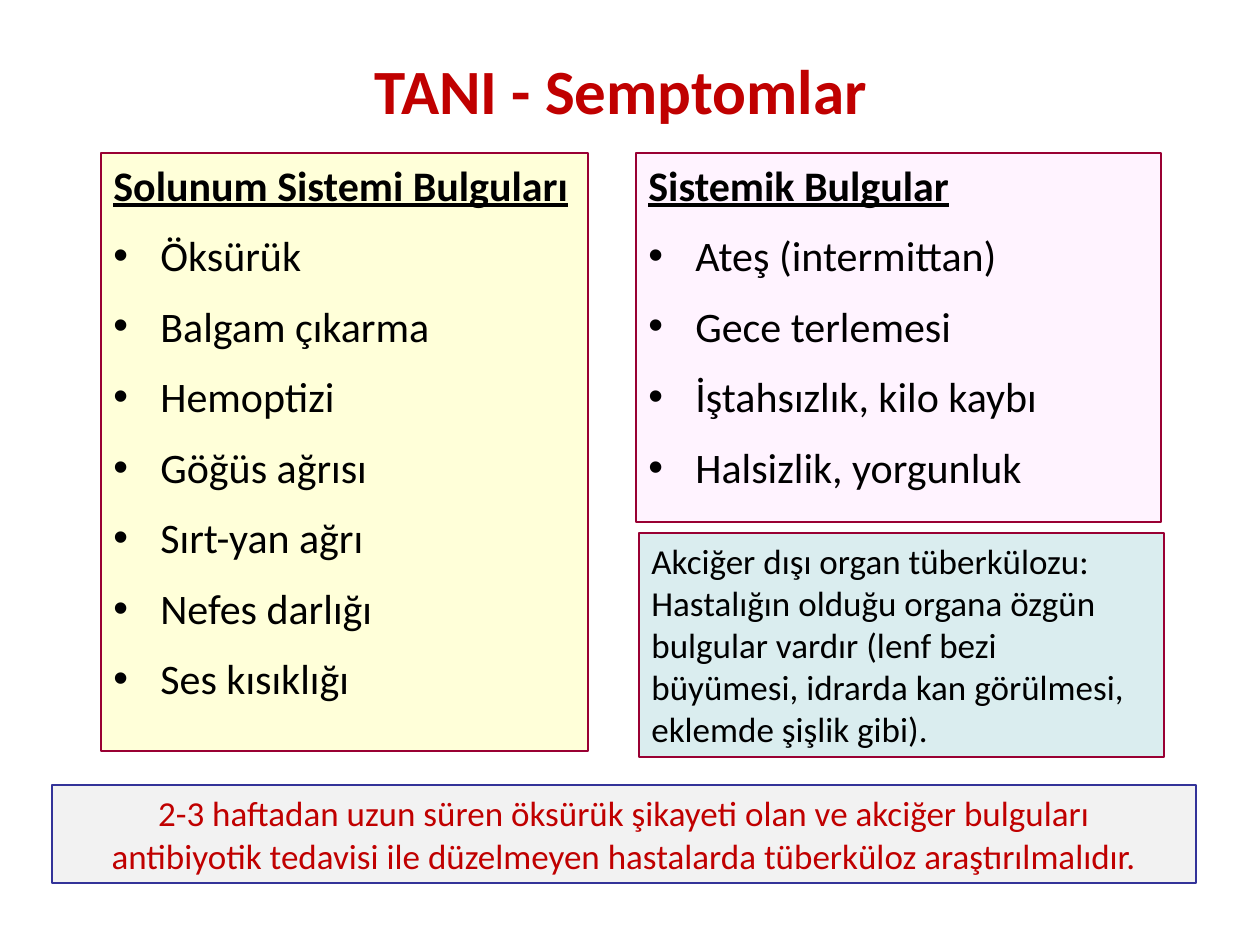
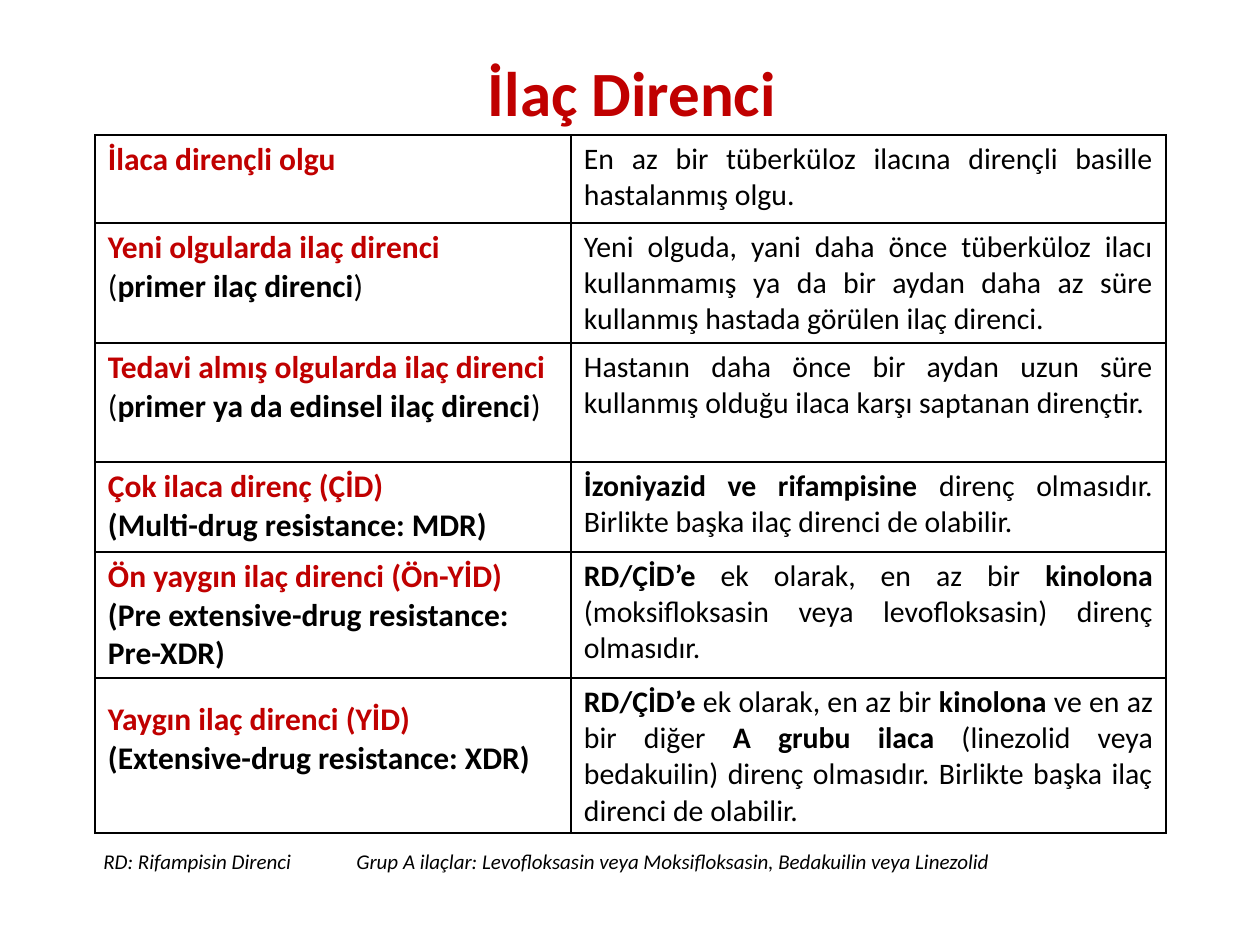
from lxml import etree
from pptx import Presentation
from pptx.dml.color import RGBColor
from pptx.enum import shapes, text
from pptx.oxml import ns
from pptx.util import Emu, Pt

RED = RGBColor(0xC0, 0x00, 0x00)
BLACK = RGBColor(0x00, 0x00, 0x00)
WINE = RGBColor(0x99, 0x00, 0x33)
INDIGO = RGBColor(0x33, 0x33, 0x99)
CREAM = RGBColor(0xFF, 0xFF, 0xD9)
PINK = RGBColor(0xFF, 0xF3, 0xFF)
AQUA = RGBColor(0xDA, 0xED, 0xEF)
GREY = RGBColor(0xF2, 0xF2, 0xF2)
FONT = "Calibri"
PX_PER_INCH = 126
BULLET_INDENT = 47

RESPIRATORY = ["Solunum Sistemi Bulguları", "Öksürük", "Balgam çıkarma", "Hemoptizi",
               "Göğüs ağrısı", "Sırt-yan ağrı", "Nefes darlığı", "Ses kısıklığı"]
SYSTEMIC = ["Sistemik Bulgular", "Ateş (intermittan)", "Gece terlemesi",
            "İştahsızlık, kilo kaybı", "Halsizlik, yorgunluk"]
EXTRAPULMONARY = ("Akciğer dışı organ tüberkülozu: Hastalığın olduğu organa özgün bulgular vardır "
                  "(lenf bezi büyümesi, idrarda kan görülmesi, eklemde şişlik gibi).")
WARNING = ("2-3 haftadan uzun süren öksürük şikayeti olan ve akciğer bulguları\n"
           "antibiyotik tedavisi ile düzelmeyen hastalarda tüberküloz araştırılmalıdır.")
FOOTNOTE = ("RD: Rifampisin Direnci\tGrup A ilaçlar: Levofloksasin veya Moksifloksasin, "
            "Bedakuilin veya Linezolid")

RESISTANCE = [
    (88, "İlaca dirençli olgu", "",
     "En az bir tüberküloz ilacına dirençli basille hastalanmış olgu."),
    (120, "Yeni olgularda ilaç direnci", "(*primer ilaç direnci*)",
     "Yeni olguda, yani daha önce tüberküloz ilacı kullanmamış ya da bir aydan daha az süre "
     "kullanmış hastada görülen ilaç direnci."),
    (119, "Tedavi almış olgularda ilaç direnci", "(*primer ya da edinsel ilaç direnci*)",
     "Hastanın daha önce bir aydan uzun süre kullanmış olduğu ilaca karşı saptanan dirençtir."),
    (90, "Çok ilaca direnç (ÇİD)", "*(Multi-drug resistance: MDR)*",
     "*İzoniyazid ve rifampisine* direnç olmasıdır. Birlikte başka ilaç direnci de olabilir."),
    (126, "Ön yaygın ilaç direnci (Ön-YİD)", "*(Pre extensive-drug resistance: Pre-XDR)*",
     "*RD/ÇİD’e* ek olarak, en az bir *kinolona* (moksifloksasin veya levofloksasin) "
     "direnç olmasıdır."),
    (155, "Yaygın ilaç direnci (YİD)", "*(Extensive-drug resistance: XDR)*",
     "*RD/ÇİD’e* ek olarak, en az bir *kinolona* ve en az bir diğer *A grubu ilaca* "
     "(linezolid veya bedakuilin) direnç olmasıdır. Birlikte başka ilaç direnci de olabilir."),
]


def px(length):
    """Turn pixels into EMU."""
    return Emu(round(length * 914400 / PX_PER_INCH))


def style(run, size, color=BLACK, bold=False):
    """Give a run its font, size, colour and weight."""
    run.font.name = FONT
    run.font.size = Pt(size)
    run.font.color.rgb = color
    run.font.bold = bold


def write(frame, wording, size, color=BLACK, bold=False, align=text.PP_ALIGN.LEFT):
    """Fill a wrapping text frame with evenly styled paragraphs."""
    frame.text = wording
    frame.word_wrap = True
    for paragraph in frame.paragraphs:
        paragraph.alignment = align
        for run in paragraph.runs:
            style(run, size, color, bold)


def add_title(slide, box, wording):
    """Add the red slide title."""
    frame = slide.shapes.add_textbox(*map(px, box)).text_frame
    write(frame, wording, 36, RED, True, text.PP_ALIGN.CENTER)


def add_panel(slide, box, fill, border=WINE):
    """Add a bordered rectangle and return its text frame."""
    panel = slide.shapes.add_shape(shapes.MSO_SHAPE.RECTANGLE, *map(px, box))
    panel.shadow.inherit = False
    panel.fill.solid()
    panel.fill.fore_color.rgb = fill
    panel.line.color.rgb = border
    panel.line.width = Pt(0.75)
    panel.text_frame.vertical_anchor = text.MSO_ANCHOR.TOP
    return panel.text_frame


def add_findings(slide, box, fill, findings):
    """Add a panel with an underlined heading above bulleted findings."""
    frame = add_panel(slide, box, fill)
    write(frame, "\n".join(findings), 24)
    heading, *items = frame.paragraphs
    heading.runs[0].font.bold = True
    heading.runs[0].font.underline = True
    for item in items:
        item.space_before = Pt(11.5)
        props = item._p.get_or_add_pPr()
        props.set("marL", str(px(BULLET_INDENT)))
        props.set("indent", str(-px(BULLET_INDENT)))
        etree.SubElement(props, ns.qn("a:buFont"), typeface="Arial")
        etree.SubElement(props, ns.qn("a:buChar"), char="•")


def write_marked(paragraph, wording, size):
    """Write text whose starred parts are bold."""
    for index, part in enumerate(wording.split("*")):
        if part:
            run = paragraph.add_run()
            run.text = part
            style(run, size, bold=index % 2 == 1)


def frame_cell(cell):
    """Give a cell thin black borders and no fill."""
    props = cell._tc.get_or_add_tcPr()
    for side in ("lnL", "lnR", "lnT", "lnB"):
        border = etree.SubElement(props, ns.qn(f"a:{side}"), w=str(Pt(1)))
        solid = etree.SubElement(border, ns.qn("a:solidFill"))
        etree.SubElement(solid, ns.qn("a:srgbClr"), val=str(BLACK))
    cell.fill.background()
    cell.margin_left = cell.margin_right = px(13)
    cell.margin_top = cell.margin_bottom = px(6)


def add_resistance_table(slide, box, term_width):
    """Add the table of resistance terms and their definitions."""
    table = slide.shapes.add_table(len(RESISTANCE), 2, *map(px, box)).table
    table.first_row = table.horz_banding = False
    table.columns[0].width = px(term_width)
    table.columns[1].width = px(box[2] - term_width)
    for row, (height, term, alias, definition) in zip(table.rows, RESISTANCE):
        row.height = px(height)
        term_cell, definition_cell = row.cells
        for cell in row.cells:
            frame_cell(cell)
        write(term_cell.text_frame, term, 18, RED, True)
        if alias:
            write_marked(term_cell.text_frame.add_paragraph(), alias, 18)
        meaning = definition_cell.text_frame.paragraphs[0]
        meaning.alignment = text.PP_ALIGN.JUSTIFY
        write_marked(meaning, definition, 17)
    term_cell.margin_top = px(23)


def add_footnote(slide, box, tab):
    """Add the italic abbreviations line with its second part at a tab stop."""
    frame = slide.shapes.add_textbox(*map(px, box)).text_frame
    write(frame, FOOTNOTE, 12)
    line = frame.paragraphs[0]
    for run in line.runs:
        run.font.italic = True
    stops = etree.SubElement(line._p.get_or_add_pPr(), ns.qn("a:tabLst"))
    etree.SubElement(stops, ns.qn("a:tab"), pos=str(px(tab)), algn="l")


def build_symptoms(slide):
    """Build the slide on symptoms."""
    add_title(slide, (243, 45, 756, 88), "TANI - Semptomlar")
    add_findings(slide, (101, 153, 487, 598), CREAM, RESPIRATORY)
    add_findings(slide, (636, 153, 525, 369), PINK, SYSTEMIC)
    warning = add_panel(slide, (52, 785, 1144, 98), GREY, INDIGO)
    warning.vertical_anchor = text.MSO_ANCHOR.MIDDLE
    write(warning, WARNING, 20, RED, align=text.PP_ALIGN.CENTER)
    write(add_panel(slide, (639, 533, 525, 224), AQUA), EXTRAPULMONARY, 20)


def build_resistance(slide):
    """Build the slide on drug resistance."""
    add_title(slide, (186, 47, 892, 88), "İlaç Direnci")
    add_resistance_table(slide, (95, 135, 1071, 698), 476)
    add_footnote(slide, (91, 842, 998, 38), 253)


def main():
    """Build and save the presentation."""
    deck = Presentation()
    deck.slide_width, deck.slide_height = px(1260), px(945)
    for build in (build_symptoms, build_resistance):
        build(deck.slides.add_slide(deck.slide_layouts[6]))
    deck.save("out.pptx")


if __name__ == "__main__":
    main()
